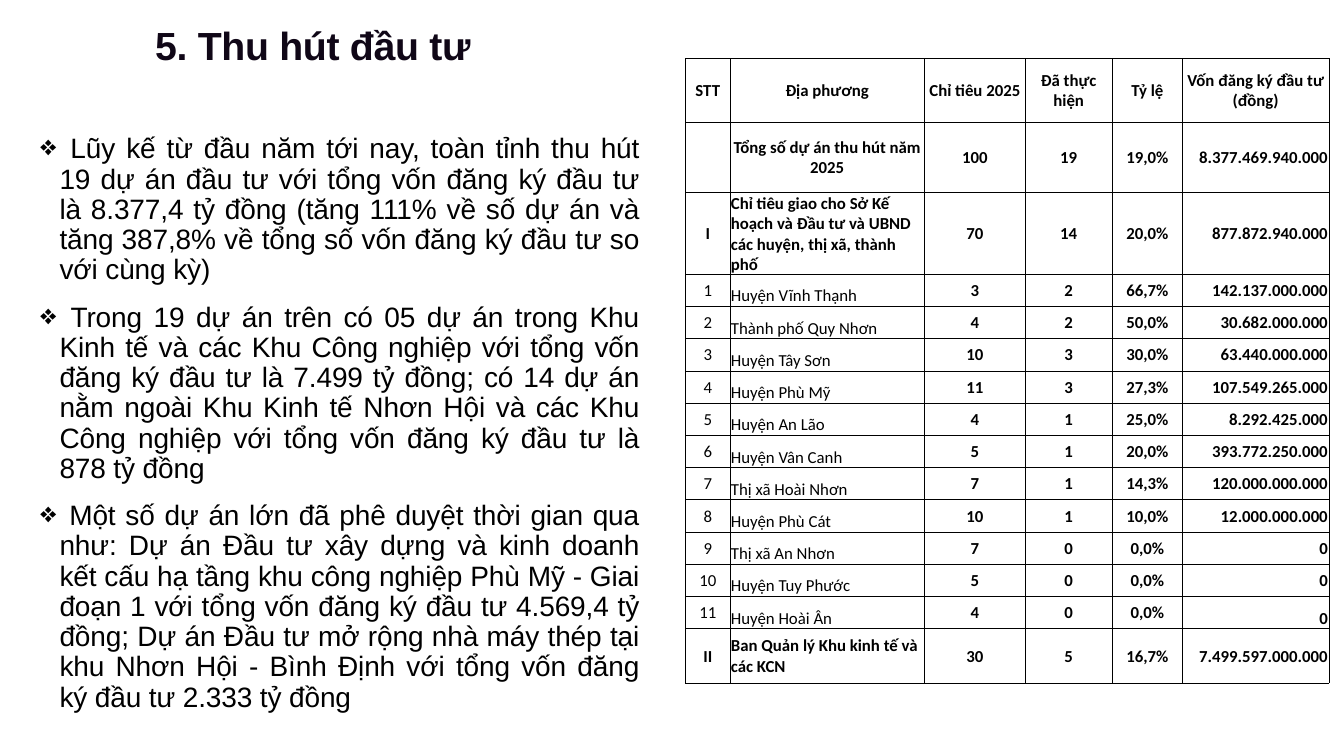
from lxml import etree
from pptx import Presentation
from pptx.dml.color import RGBColor
from pptx.enum import text
from pptx.oxml import ns
from pptx.util import Inches, Pt

# Content
TITLE = "5. Thu hút đầu tư"
POINTS = [
    "Lũy kế từ đầu năm tới nay, toàn tỉnh thu hút 19 dự án đầu tư với tổng vốn đăng ký đầu tư là "
    "8.377,4 tỷ đồng (tăng 111% về số dự án và tăng 387,8% về tổng số vốn đăng ký đầu tư so với cùng kỳ)",
    "Trong 19 dự án trên có 05 dự án trong Khu Kinh tế và các Khu Công nghiệp với tổng vốn đăng ký "
    "đầu tư là 7.499 tỷ đồng; có 14 dự án nằm ngoài Khu Kinh tế Nhơn Hội và các Khu Công nghiệp với "
    "tổng vốn đăng ký đầu tư là 878 tỷ đồng",
    "Một số dự án lớn đã phê duyệt thời gian qua như: Dự án Đầu tư xây dựng và kinh doanh kết cấu hạ "
    "tầng khu công nghiệp Phù Mỹ - Giai đoạn 1 với tổng vốn đăng ký đầu tư 4.569,4 tỷ đồng; Dự án Đầu "
    "tư mở rộng nhà máy thép tại khu Nhơn Hội - Bình Định với tổng vốn đăng ký đầu tư 2.333 tỷ đồng",
]
HEADER = ("STT", "Địa phương", "Chỉ tiêu 2025", "Đã thực hiện", "Tỷ lệ", "Vốn đăng ký đầu tư (đồng)")
TOTAL = ("", "Tổng số dự án thu hút năm 2025", "100", "19", "19,0%", "8.377.469.940.000")
GROUP_ONE = ("I", "Chỉ tiêu giao cho Sở Kế hoạch và Đầu tư và UBND các huyện, thị xã, thành phố",
             "70", "14", "20,0%", "877.872.940.000")
DISTRICTS = [
    ("Huyện Vĩnh Thạnh", "3", "2", "66,7%", "142.137.000.000"),
    ("Thành phố Quy Nhơn", "4", "2", "50,0%", "30.682.000.000"),
    ("Huyện Tây Sơn", "10", "3", "30,0%", "63.440.000.000"),
    ("Huyện Phù Mỹ", "11", "3", "27,3%", "107.549.265.000"),
    ("Huyện An Lão", "4", "1", "25,0%", "8.292.425.000"),
    ("Huyện Vân Canh", "5", "1", "20,0%", "393.772.250.000"),
    ("Thị xã Hoài Nhơn", "7", "1", "14,3%", "120.000.000.000"),
    ("Huyện Phù Cát", "10", "1", "10,0%", "12.000.000.000"),
    ("Thị xã An Nhơn", "7", "0", "0,0%", "0"),
    ("Huyện Tuy Phước", "5", "0", "0,0%", "0"),
    ("Huyện Hoài Ân", "4", "0", "0,0%", "0"),
]
GROUP_TWO = ("II", "Ban Quản lý Khu kinh tế và các KCN", "30", "5", "16,7%", "7.499.597.000.000")
ROWS = [HEADER, TOTAL, GROUP_ONE]
ROWS += [(str(number), *district) for number, district in enumerate(DISTRICTS, 1)]
ROWS += [GROUP_TWO]

COLUMN_WIDTHS = [0.44, 1.93, 1, 0.86, 0.7, 1.45]
ROW_HEIGHTS = [0.63, 0.7, 0.81] + [0.32] * len(DISTRICTS) + [0.54]
FIRST_DISTRICT, LAST_DISTRICT = 3, 2 + len(DISTRICTS)

BLACK = RGBColor(0x00, 0x00, 0x00)
TITLE_COLOR = RGBColor(0x10, 0x07, 0x17)
LEFT, CENTER, RIGHT, JUSTIFY = (text.PP_ALIGN.LEFT, text.PP_ALIGN.CENTER,
                                text.PP_ALIGN.RIGHT, text.PP_ALIGN.JUSTIFY)
MIDDLE, BOTTOM = text.MSO_ANCHOR.MIDDLE, text.MSO_ANCHOR.BOTTOM


def write(paragraph, words, size, font="Arial", color=BLACK, bold=False, align=LEFT,
          before=0, after=0, spacing=None, tracking=None):
    paragraph.alignment = align
    paragraph.space_before, paragraph.space_after = Pt(before), Pt(after)
    if spacing:
        paragraph.line_spacing = spacing
    run = paragraph.add_run()
    run.text = words
    run.font.name, run.font.size, run.font.bold = font, Pt(size), bold
    run.font.color.rgb = color
    if tracking:
        run.font._element.set("spc", str(round(tracking * 100)))


def add_bullet(paragraph, symbol, indent):
    properties = paragraph._p.get_or_add_pPr()
    properties.set("marL", str(Inches(indent)))
    properties.set("indent", str(-Inches(indent)))
    etree.SubElement(properties, ns.qn("a:buChar")).set("char", symbol)


def add_borders(cell, width):
    properties = cell._tc.get_or_add_tcPr()
    for side in ("lnL", "lnR", "lnT", "lnB"):
        line = etree.SubElement(properties, ns.qn("a:" + side), w=str(Pt(width)))
        fill = etree.SubElement(line, ns.qn("a:solidFill"))
        etree.SubElement(fill, ns.qn("a:srgbClr"), val=str(BLACK))


def add_plain_table(slide, left, top, column_widths, row_heights):
    frame = slide.shapes.add_table(len(row_heights), len(column_widths), Inches(left), Inches(top),
                                   Inches(sum(column_widths)), Inches(sum(row_heights)))
    table = frame.table
    table.first_row = table.horz_banding = False
    for column, width in zip(table.columns, column_widths):
        column.width = Inches(width)
    for row, height in zip(table.rows, row_heights):
        row.height = Inches(height)
    return table


presentation = Presentation()
presentation.slide_width, presentation.slide_height = Inches(13.33), Inches(7.5)
slide = presentation.slides.add_slide(presentation.slide_layouts[6])

# Bullet points in a one-cell table
points_cell = add_plain_table(slide, 0.3, 0.99, [6.14], [6.43]).cell(0, 0)
points_cell.fill.background()
points_cell.vertical_anchor = MIDDLE
for index, point in enumerate(POINTS):
    frame = points_cell.text_frame
    paragraph = frame.add_paragraph() if index else frame.paragraphs[0]
    write(paragraph, " " + point, 20, align=JUSTIFY, before=6, after=6, spacing=0.97, tracking=-0.1)
    add_bullet(paragraph, "❖", 0.19)

# Title
title = slide.shapes.add_textbox(Inches(1.44), Inches(0.16), Inches(3.38), Inches(0.57))
title.text_frame.word_wrap = False
write(title.text_frame.paragraphs[0], TITLE, 28, color=TITLE_COLOR, bold=True, before=3, tracking=-0.2)

# Investment table by locality
table = add_plain_table(slide, 6.8, 0.58, COLUMN_WIDTHS, ROW_HEIGHTS)
for row_index, row in enumerate(ROWS):
    is_district = FIRST_DISTRICT <= row_index <= LAST_DISTRICT
    for column_index, value in enumerate(row):
        cell = table.cell(row_index, column_index)
        add_borders(cell, 0.5)
        cell.fill.background()
        cell.margin_left = cell.margin_right = cell.margin_top = Inches(0.01)
        cell.margin_bottom = 0
        at_bottom = (is_district and column_index == 1) or (row_index, column_index) == (LAST_DISTRICT, 5)
        cell.vertical_anchor = BOTTOM if at_bottom else MIDDLE
        align = CENTER
        if column_index == 1 and row_index > 1:
            align = LEFT
        elif column_index == 5 and row_index > 0:
            align = RIGHT
        if value:
            write(cell.text_frame.paragraphs[0], value, 12, font="Calibri", align=align,
                  bold=not (is_district and column_index < 2))

presentation.save("out.pptx")
